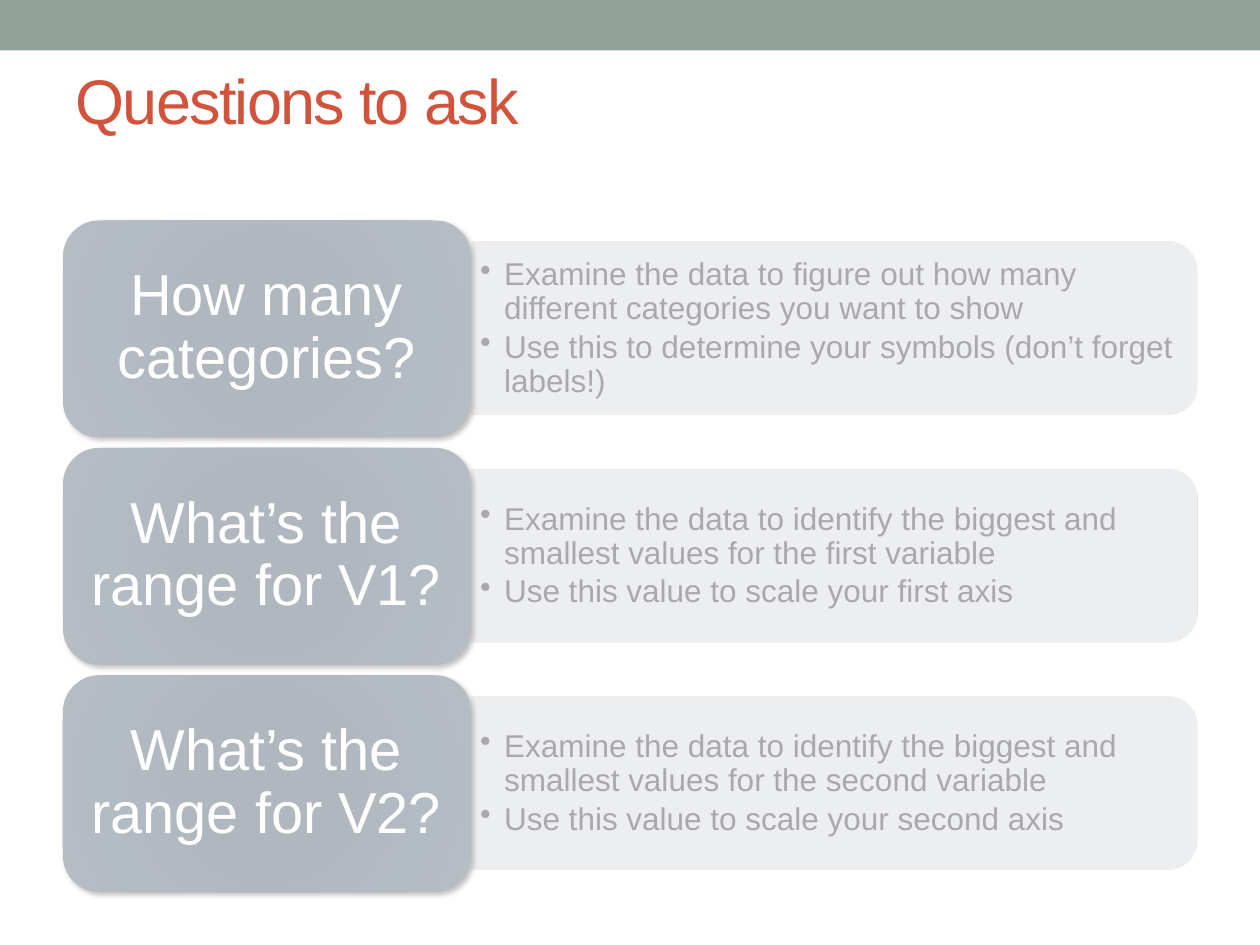
from lxml import etree
from pptx import Presentation
from pptx.dml.color import RGBColor
from pptx.enum import shapes, text
from pptx.oxml import parse_xml
from pptx.oxml.ns import nsdecls, qn
from pptx.util import Inches, Pt

BAND = RGBColor(0x93, 0xA2, 0x99)
RED = RGBColor(0xD2, 0x53, 0x3C)
PANEL = RGBColor(0xD0, 0xD2, 0xD4)
INK = RGBColor(0x29, 0x29, 0x34)
WHITE = RGBColor(0xFF, 0xFF, 0xFF)
CARD_STOPS = [(0, "3B4D61"), (34, "3C4D60"), (70, "43566B"), (100, "4C5A6A")]

FIRST_TOP, LAST_TOP = 1.75, 5.36
ROWS = [
    ("How many categories?",
     ["Examine the data to figure out how many different categories you want to show",
      "Use this to determine your symbols (don’t forget labels!)"]),
    ("What’s the range for V1?",
     ["Examine the data to identify the biggest and smallest values for the first variable",
      "Use this value to scale your first axis"]),
    ("What’s the range for V2?",
     ["Examine the data to identify the biggest and smallest values for the second variable",
      "Use this value to scale your second axis"]),
]
VEIL_LEFTS = [0.33, 0.25, 0.5]


def set_alpha(color_parent, percent):
    """Make the solid colour inside an XML element partly transparent."""
    color = color_parent.find(".//" + qn("a:srgbClr"))
    etree.SubElement(color, qn("a:alpha")).set("val", str(percent * 1000))


def add_block(page, kind, left, top, width, height, color=None, alpha=None):
    block = page.shapes.add_shape(
        kind, Inches(left), Inches(top), Inches(width), Inches(height))
    block.shadow.inherit = False
    block.line.fill.background()
    if color is not None:
        block.fill.solid()
        block.fill.fore_color.rgb = color
    if alpha is not None:
        set_alpha(block.fill._xPr.find(qn("a:solidFill")), alpha)
    return block


def write(frame, lines, size, color, align=text.PP_ALIGN.LEFT, spacing=None,
          after=None, bullet=False, tracking=None, insets=None):
    """Fill a text frame with one paragraph for each line."""
    frame.word_wrap = True
    frame.vertical_anchor = text.MSO_ANCHOR.MIDDLE
    if insets:
        frame.margin_left = frame.margin_right = Inches(insets[0])
        frame.margin_top = frame.margin_bottom = Inches(insets[1])
    for index, line in enumerate(lines):
        para = frame.add_paragraph() if index else frame.paragraphs[0]
        para.alignment = align
        if spacing:
            para.line_spacing = spacing
        if after:
            para.space_after = Pt(after)
        if bullet:
            props = para._p.get_or_add_pPr()
            props.set("marL", str(Inches(0.19)))
            props.set("indent", str(-Inches(0.19)))
            etree.SubElement(props, qn("a:buChar")).set("char", "•")
        span = para.add_run()
        span.text = line
        span.font.name = "Arial"
        span.font.size = Pt(size)
        span.font.color.rgb = color
        if tracking:
            span._r.get_or_add_rPr().set("spc", str(tracking * 100))


def add_text(page, left, top, width, height, lines, **style):
    box = page.shapes.add_textbox(
        Inches(left), Inches(top), Inches(width), Inches(height))
    write(box.text_frame, lines, **style)


def add_header(page):
    add_block(page, shapes.MSO_SHAPE.RECTANGLE, 0, 0, 10, 0.4, BAND)
    title = page.shapes.title
    title.left, title.top = Inches(0.5), Inches(0.25)
    title.width, title.height = Inches(9), Inches(1.08)
    write(title.text_frame, ["Questions to ask"], size=36, color=RED, tracking=-1)


def add_panel(page, left, top, width, height, points):
    """Answer panel: a tab shape turned so that its round corners face right."""
    shift = (width - height) / 2
    panel = add_block(page, shapes.MSO_SHAPE.ROUND_2_SAME_RECTANGLE,
                      left + shift, top - shift, height, width, PANEL, alpha=90)
    panel.rotation = 90
    panel.line.color.rgb = PANEL
    panel.line.width = Pt(0.75)
    set_alpha(panel.line._ln, 90)
    add_text(page, left, top + 0.07, width - 0.07, height - 0.13, points,
             size=18, color=INK, spacing=0.9, after=2.7, bullet=True,
             insets=(0.07, 0.04))


def add_card(page, left, top, width, height, question):
    """Question card with a radial gradient and a soft shadow."""
    card = add_block(page, shapes.MSO_SHAPE.ROUNDED_RECTANGLE,
                     left, top, width, height)
    stops = "".join(f'<a:gs pos="{pos * 1000}"><a:srgbClr val="{color}"/></a:gs>'
                    for pos, color in CARD_STOPS)
    gradient = parse_xml(
        f'<a:gradFill {nsdecls("a")} rotWithShape="1"><a:gsLst>{stops}</a:gsLst>'
        '<a:path path="circle"><a:fillToRect l="100000" t="100000" r="100000" '
        'b="100000"/></a:path></a:gradFill>')
    props = card._element.spPr
    props.find(qn("a:prstGeom")).addnext(gradient)
    shadow = parse_xml(
        f'<a:outerShdw {nsdecls("a")} blurRad="{Pt(3)}" dist="{Pt(2)}" '
        'dir="2700000" rotWithShape="0"><a:srgbClr val="000000">'
        '<a:alpha val="60000"/></a:srgbClr></a:outerShdw>')
    props.find(qn("a:effectLst")).append(shadow)
    add_text(page, left + 0.08, top + 0.08, width - 0.17, height - 0.17, [question],
             size=33, color=WHITE, align=text.PP_ALIGN.CENTER, spacing=0.9,
             insets=(0.14, 0.07))


def add_row(page, left, top, question, points):
    add_panel(page, left + 3.24, top + 0.17, 5.76, 1.37, points)
    add_card(page, left, top, 3.24, 1.72, question)


def add_veils(page, top, height):
    """Pale sheets that dim the rows."""
    for index, left in enumerate(VEIL_LEFTS):
        add_block(page, shapes.MSO_SHAPE.RECTANGLE,
                  left, top + index * height, 9.25, height, WHITE, alpha=60)


def main():
    deck = Presentation()
    deck.slide_width, deck.slide_height = Inches(10), Inches(7.5)
    page = deck.slides.add_slide(deck.slide_layouts[5])
    add_header(page)
    pitch = (LAST_TOP - FIRST_TOP) / (len(ROWS) - 1)
    for index, (question, points) in enumerate(ROWS):
        add_row(page, 0.5, FIRST_TOP + index * pitch, question, points)
    add_veils(page, 1.67, 1.83)
    deck.save("out.pptx")


if __name__ == "__main__":
    main()
